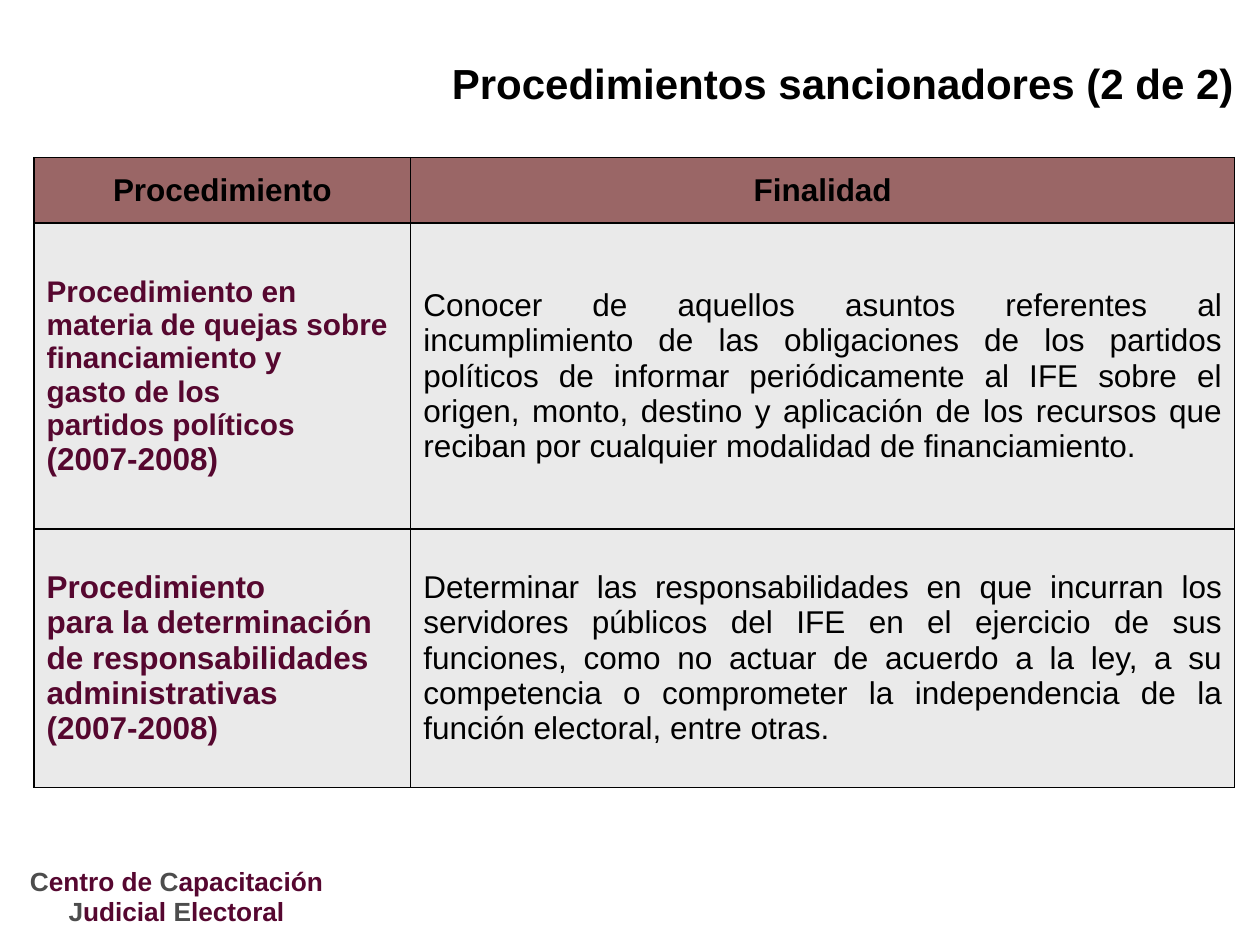
from lxml import etree
from pptx import Presentation
from pptx.dml.color import RGBColor
from pptx.enum.text import MSO_ANCHOR, PP_ALIGN
from pptx.oxml.ns import qn
from pptx.util import Inches, Pt

LEFT, CENTER, RIGHT, JUSTIFY = PP_ALIGN.LEFT, PP_ALIGN.CENTER, PP_ALIGN.RIGHT, PP_ALIGN.JUSTIFY
MIDDLE = MSO_ANCHOR.MIDDLE
BLACK, WINE, GRAY = "000000", "56072F", "4D4D4D"
HEADER_FILL, BODY_FILL, FOOTER_WINE = "580000", "EAEAEA", "560730"


def rgb(value):
    return RGBColor.from_string(value)


class Deck:
    font = "Arial"

    def __init__(self):
        self.prs = Presentation()
        self.prs.slide_width, self.prs.slide_height = Inches(10), Inches(7.5)
        self.s = self.prs.slides.add_slide(self.prs.slide_layouts[6])

    def add_paragraphs(self, tf, paragraphs, align=LEFT, spacing=None):
        tf.word_wrap = True
        for i, runs in enumerate(paragraphs):
            p = tf.paragraphs[0] if i == 0 else tf.add_paragraph()
            p.alignment = align
            if spacing:
                p.line_spacing = spacing
            for text, size, color, bold in runs:
                r = p.add_run()
                r.text = text
                r.font.name, r.font.size, r.font.bold = self.font, Pt(size), bold
                r.font.color.rgb = rgb(color)

    def text(self, box, paragraphs, align, spacing=None, top=0.05):
        tf = self.s.shapes.add_textbox(*map(Inches, box)).text_frame
        tf.margin_top = Inches(top)
        self.add_paragraphs(tf, paragraphs, align, spacing)

    def border(self, cell):
        tcPr = cell._tc.get_or_add_tcPr()
        for i, side in enumerate(("lnL", "lnR", "lnT", "lnB")):
            ln = etree.Element(qn(f"a:{side}"), w=str(Pt(1)))
            fill = etree.SubElement(ln, qn("a:solidFill"))
            etree.SubElement(fill, qn("a:srgbClr"), val=BLACK)
            tcPr.insert(i, ln)

    def cell(self, cell, paragraphs, align, fill, alpha=None):
        cell.vertical_anchor = MIDDLE
        cell.fill.solid()
        cell.fill.fore_color.rgb = rgb(fill)
        if alpha:
            color = cell._tc.tcPr.find(f".//{qn('a:srgbClr')}")
            etree.SubElement(color, qn("a:alpha"), val=str(alpha * 1000))
        self.border(cell)
        self.add_paragraphs(cell.text_frame, paragraphs, align)

    def table(self, box, widths, heights, headers, rows):
        shape = self.s.shapes.add_table(len(heights), len(widths), *map(Inches, box))
        table = shape.table
        for column, width in zip(table.columns, widths):
            column.width = Inches(width)
        for row, height in zip(table.rows, heights):
            row.height = Inches(height)
        for i, header in enumerate(headers):
            self.cell(table.cell(0, i), [[(header, 18, BLACK, True)]], CENTER, HEADER_FILL, 60)
        for i, (lines, purpose) in enumerate(rows, 1):
            name = [[(text, size, WINE, True)] for text, size in lines]
            self.cell(table.cell(i, 0), name, LEFT, BODY_FILL)
            self.cell(table.cell(i, 1), [[(purpose, 18, BLACK, False)]], JUSTIFY, BODY_FILL)


def main():
    deck = Deck()
    footer = [
        [("C", GRAY), ("entro de ", FOOTER_WINE), ("C", GRAY), ("apacitación", FOOTER_WINE)],
        [("J", GRAY), ("udicial ", FOOTER_WINE), ("E", GRAY), ("lectoral", FOOTER_WINE)],
    ]
    deck.text((0.09, 6.59, 2.62, 0.8),
              [[(text, 15, color, True) for text, color in line] for line in footer],
              CENTER, spacing=0.96, top=0.29)
    rows = [
        ([("Procedimiento en materia de quejas sobre", 17), ("financiamiento y", 17),
          ("gasto de los", 17), ("partidos políticos", 17), ("(2007-2008)", 18)],
         "Conocer de aquellos asuntos referentes al incumplimiento de las obligaciones "
         "de los partidos políticos de informar periódicamente al IFE sobre el origen, "
         "monto, destino y aplicación de los recursos que reciban por cualquier "
         "modalidad de financiamiento."),
        ([("Procedimiento", 18),
          ("para la determinación de responsabilidades administrativas", 18),
          ("(2007-2008)", 18)],
         "Determinar las responsabilidades en que incurran los servidores públicos del "
         "IFE en el ejercicio de sus funciones, como no actuar de acuerdo a la ley, a su "
         "competencia o comprometer la independencia de la función electoral, entre otras."),
    ]
    deck.table((0.27, 1.25, 9.53, 5), (2.99, 6.54), (0.52, 2.43, 2.05),
               ("Procedimiento", "Finalidad"), rows)
    deck.text((3.35, 0.41, 6.54, 0.51),
              [[("Procedimientos sancionadores (2 de 2)", 24, BLACK, True)]], RIGHT)
    deck.prs.save("out.pptx")


if __name__ == "__main__":
    main()
